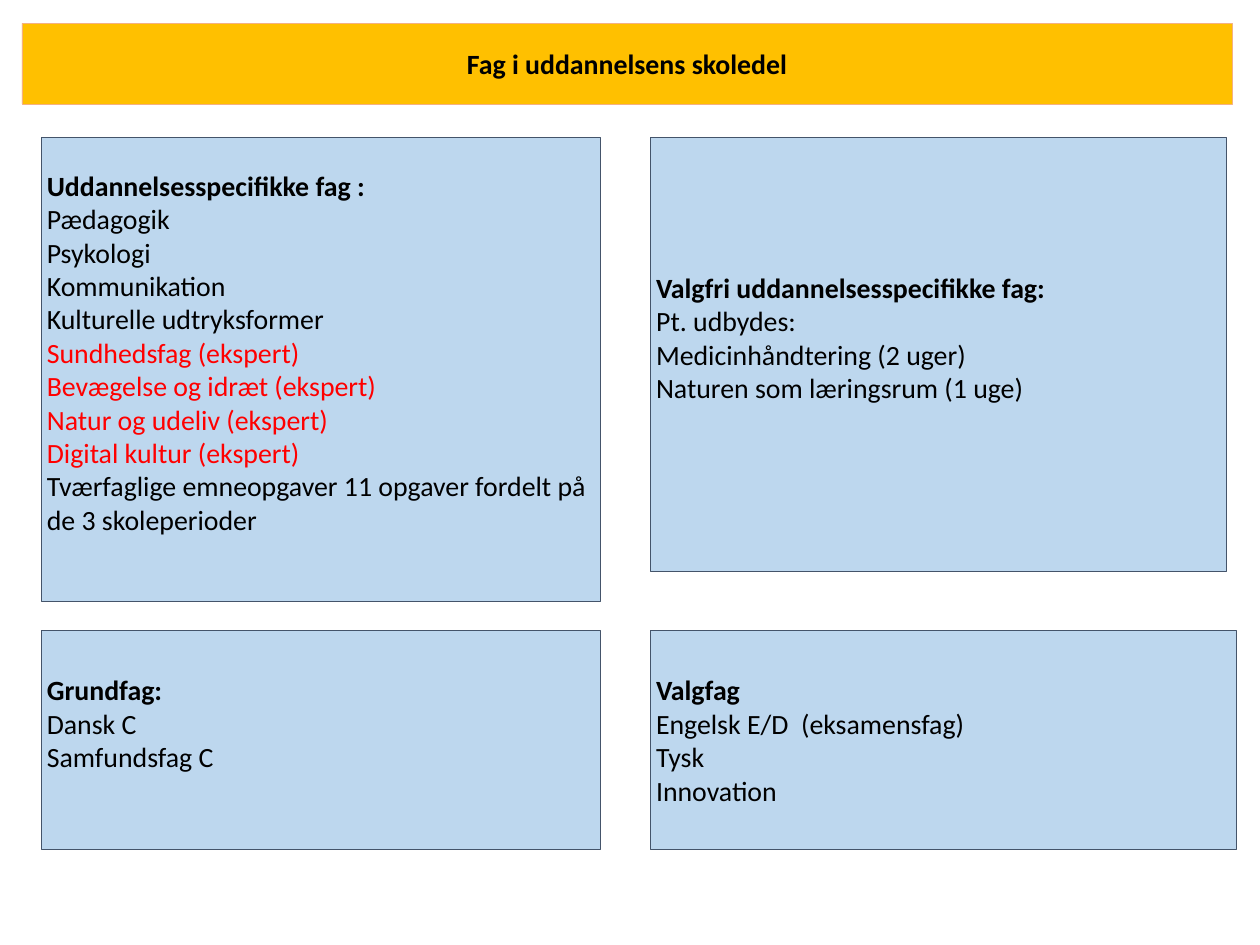
from dataclasses import dataclass

from pptx import Presentation, util as u
from pptx.dml.color import RGBColor
from pptx.enum import shapes, text


@dataclass(frozen=True)
class Theme:
    font: str = "Calibri"
    size: float = 37.6
    line_height: float = 0.63
    inset: float = 0.05
    ink: str = "000000"
    expert: str = "FF0000"
    panel: str = "BDD7EE"
    panel_edge: str = "44546A"
    banner: str = "FFC000"
    banner_edge: str = "F4B183"


THEME = Theme()
WIDTH, HEIGHT = 23.62, 17.72
LEFT, RIGHT = 3.3, 51.65
UPPER, LOWER = 14.5, 66.76
LOWER_HEIGHT = 23.08

SUBJECT_PANELS = [
    ((LEFT, UPPER, 44.33, 49.1), 1, "Uddannelsesspecifikke fag :", [
        "Pædagogik",
        "Psykologi",
        "Kommunikation",
        "Kulturelle udtryksformer",
        "Sundhedsfag (ekspert)",
        "Bevægelse og idræt (ekspert)",
        "Natur og udeliv (ekspert)",
        "Digital kultur (ekspert)",
        "Tværfaglige emneopgaver 11 opgaver fordelt på de 3 skoleperioder",
    ]),
    ((RIGHT, UPPER, 45.68, 45.94), 1, "Valgfri uddannelsesspecifikke fag:", [
        "Pt. udbydes:",
        "Medicinhåndtering (2 uger)",
        "Naturen som læringsrum (1 uge)",
    ]),
    ((LEFT, LOWER, 44.33, LOWER_HEIGHT), 1, "Grundfag:", [
        "Dansk C",
        "Samfundsfag C",
    ]),
    ((RIGHT, LOWER, 46.44, LOWER_HEIGHT), 0, "Valgfag", [
        "Engelsk E/D  (eksamensfag)",
        "Tysk",
        "Innovation",
    ]),
]


def write(paragraph, wording, bold=False, color=THEME.ink, align=text.PP_ALIGN.LEFT):
    paragraph.alignment = align
    run = paragraph.add_run()
    run.text = wording
    run.font.name = THEME.font
    run.font.size = u.Pt(THEME.size)
    run.font.bold = bold
    run.font.color.rgb = RGBColor.from_string(color)


def add_block(slide, box, fill, edge, lines_below=0):
    left, top, width, height = box
    block = slide.shapes.add_shape(
        shapes.MSO_SHAPE.RECTANGLE,
        u.Inches(WIDTH * left / 100), u.Inches(HEIGHT * top / 100),
        u.Inches(WIDTH * width / 100), u.Inches(HEIGHT * height / 100))
    block.shadow.inherit = False
    block.fill.solid()
    block.fill.fore_color.rgb = RGBColor.from_string(fill)
    block.line.color.rgb = RGBColor.from_string(edge)
    block.line.width = u.Pt(1)
    frame = block.text_frame
    frame.word_wrap = True
    frame.vertical_anchor = text.MSO_ANCHOR.MIDDLE
    frame.margin_bottom = u.Inches(THEME.inset + lines_below * THEME.line_height)
    return frame


def add_subject_panel(slide, box, lines_below, heading, subjects):
    frame = add_block(slide, box, THEME.panel, THEME.panel_edge, lines_below)
    write(frame.paragraphs[0], heading, bold=True)
    for subject in subjects:
        color = THEME.expert if "(ekspert)" in subject else THEME.ink
        write(frame.add_paragraph(), subject, color=color)


def add_banner(slide, box, title):
    frame = add_block(slide, box, THEME.banner, THEME.banner_edge)
    write(frame.paragraphs[0], title, bold=True, align=text.PP_ALIGN.CENTER)


def main():
    deck = Presentation()
    deck.slide_width, deck.slide_height = u.Inches(WIDTH), u.Inches(HEIGHT)
    slide = deck.slides.add_slide(deck.slide_layouts[6])
    for panel in SUBJECT_PANELS:
        add_subject_panel(slide, *panel)
    add_banner(slide, (1.74, 2.48, 96.06, 8.52), "Fag i uddannelsens skoledel")
    deck.save("out.pptx")


if __name__ == "__main__":
    main()
